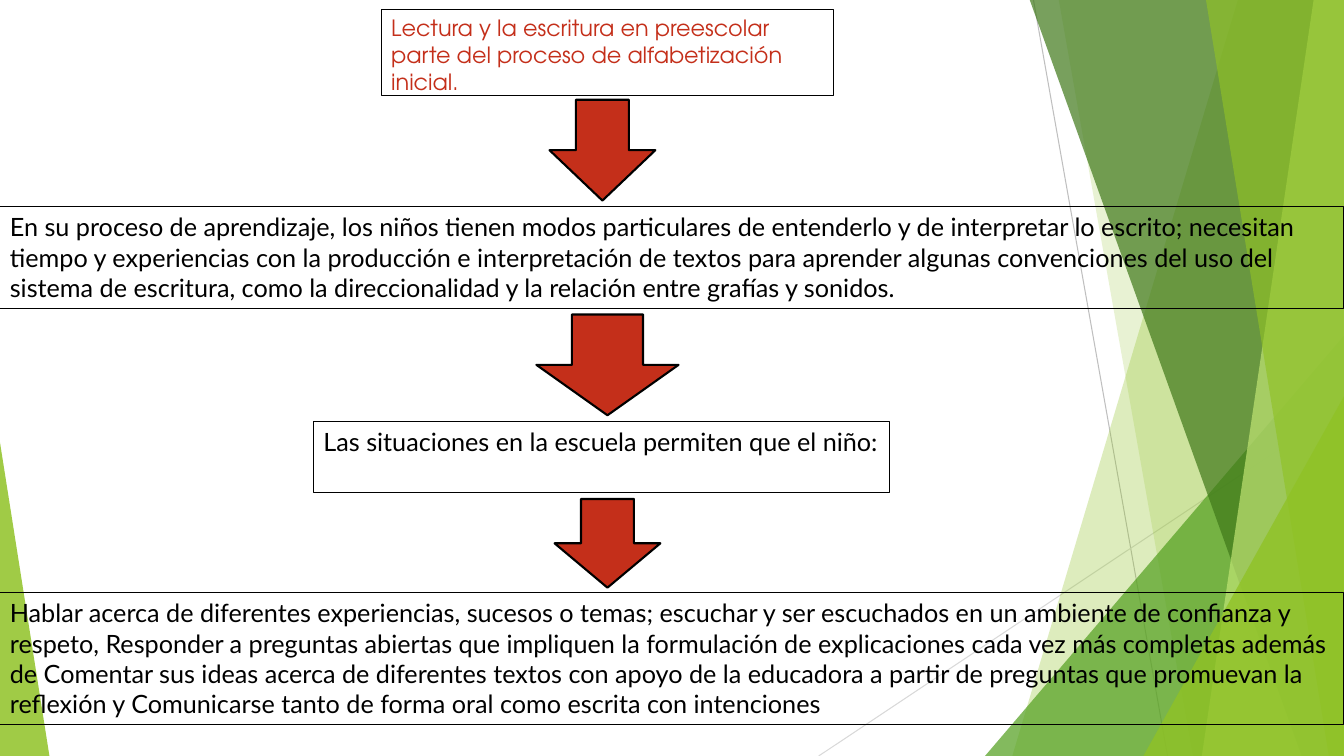
from typing import NamedTuple

from lxml import etree
from pptx import Presentation
from pptx import util as u
from pptx.dml.color import RGBColor
from pptx.enum import shapes, text
from pptx.oxml.ns import qn


class Ray(NamedTuple):
    start: tuple[float, float]
    end: tuple[float, float]
    color: str


class Band(NamedTuple):
    points: list[tuple[float, float]]
    color: str
    opacity: int


class Triangle(NamedTuple):
    box: tuple[float, float, float, float]
    apex: float
    color: str
    opacity: int


class Step(NamedTuple):
    box: tuple[float, float, float, float]
    words: str


RIGHT, TOP, BOTTOM = 13.33, -0.01, 7.5
RED, BLACK = "C42F1A", "000000"


def edge_band(top: float, bottom: float, color: str, opacity: int) -> Band:
    return Band([(top, TOP), (RIGHT, TOP), (RIGHT, BOTTOM), (bottom, BOTTOM)], color, opacity)


RAYS = [
    Ray((10.25, 0), (11.58, BOTTOM), "BFBFBF"),
    Ray((RIGHT, 4.03), (8.12, BOTTOM), "D9D9D9"),
]
FACETS = [
    edge_band(12.28, 10.04, "90C226", 30),
    edge_band(10.5, 11.83, "90C226", 20),
    Triangle((9.77, 3.33, 3.56, 4.17), 1, "54A021", 72),
    edge_band(10.21, 12.91, "3F7819", 70),
    edge_band(13.03, 11.92, "C0E474", 70),
    edge_band(11.96, 13.18, "90C226", 65),
    Triangle((11.34, 3.93, 1.99, 3.57), 1, "90C226", 80),
    Triangle((0, 4.39, 0.49, 3.11), 0, "90C226", 85),
]
TITLE = Step(
    (3.78, 0.09, 4.49, 0.86),
    "Lectura y la escritura en preescolar parte del proceso de alfabetización inicial.",
)
STEPS = [
    Step(
        (0, 2.05, RIGHT, 1.01),
        "En su proceso de aprendizaje, los niños tienen modos particulares de entenderlo "
        "y de interpretar lo escrito; necesitan tiempo y experiencias con la producción e "
        "interpretación de textos para aprender algunas convenciones del uso del sistema de "
        "escritura, como la direccionalidad y la relación entre grafías y sonidos.",
    ),
    Step((3.11, 4.18, 5.71, 0.71), "Las situaciones en la escuela permiten que el niño:"),
    Step(
        (0, 5.88, RIGHT, 1.31),
        "Hablar acerca de diferentes experiencias, sucesos o temas; escuchar y ser escuchados "
        "en un ambiente de confianza y respeto, Responder a preguntas abiertas que impliquen "
        "la formulación de explicaciones cada vez más completas además de Comentar sus ideas "
        "acerca de diferentes textos con apoyo de la educadora a partir de preguntas que "
        "promuevan la reflexión y Comunicarse tanto de forma oral como escrita con intenciones",
    ),
]
ARROWS = [(5.45, 0.99, 1.05, 1), (5.32, 3.12, 1.41, 1), (5.5, 4.95, 1.05, 0.88)]


def rgb(color: str) -> RGBColor:
    return RGBColor.from_string(color)


def outline(sp, color: str, width: float) -> None:
    sp.line.color.rgb = rgb(color)
    sp.line.width = u.Pt(width)


def paint(sp, color: str, opacity: int = 100) -> None:
    sp.shadow.inherit = False
    sp.fill.solid()
    sp.fill.fore_color.rgb = rgb(color)
    if opacity < 100:
        srgb = sp.fill._xPr.find(qn("a:solidFill")).find(qn("a:srgbClr"))
        etree.SubElement(srgb, qn("a:alpha")).set("val", str(opacity * 1000))


def draw_ray(slide, ray: Ray) -> None:
    ends = [u.Inches(v) for v in (*ray.start, *ray.end)]
    line = slide.shapes.add_connector(shapes.MSO_CONNECTOR.STRAIGHT, *ends)
    outline(line, ray.color, 0.75)
    etree.SubElement(line._element.spPr, qn("a:effectLst"))


def draw_facet(slide, facet: Band | Triangle) -> None:
    if isinstance(facet, Triangle):
        box = [u.Inches(v) for v in facet.box]
        sp = slide.shapes.add_shape(shapes.MSO_SHAPE.ISOSCELES_TRIANGLE, *box)
        sp.adjustments[0] = facet.apex
    else:
        points = [(u.Inches(x), u.Inches(y)) for x, y in facet.points]
        builder = slide.shapes.build_freeform(*points[0])
        builder.add_line_segments(points[1:], close=True)
        sp = builder.convert_to_shape()
    paint(sp, facet.color, facet.opacity)
    sp.line.fill.background()


def draw_arrow(slide, box: tuple[float, float, float, float]) -> None:
    sp = slide.shapes.add_shape(shapes.MSO_SHAPE.DOWN_ARROW, *[u.Inches(v) for v in box])
    paint(sp, RED)
    outline(sp, BLACK, 1.5)


def fill_step(sp, step: Step, size: float, font: str, color: str) -> None:
    sp.left, sp.top, sp.width, sp.height = [u.Inches(v) for v in step.box]
    outline(sp, BLACK, 0.75)
    tf = sp.text_frame
    tf.word_wrap = True
    tf.auto_size = text.MSO_AUTO_SIZE.NONE
    tf.vertical_anchor = text.MSO_ANCHOR.TOP
    p = tf.paragraphs[0]
    p.alignment = text.PP_ALIGN.LEFT
    r = p.add_run()
    r.text = step.words
    r.font.size = u.Pt(size)
    r.font.name = font
    r.font.color.rgb = rgb(color)


def main() -> None:
    prs = Presentation()
    prs.slide_width, prs.slide_height = u.Inches(RIGHT), u.Inches(BOTTOM)
    slide = prs.slides.add_slide(prs.slide_layouts.get_by_name("Title Only"))
    for ray in RAYS:
        draw_ray(slide, ray)
    for facet in FACETS:
        draw_facet(slide, facet)
    title = slide.shapes.title
    slide.shapes._spTree.append(title._element)
    fill_step(title, TITLE, 16, "TeX Gyre Adventor", RED)
    for arrow, step in zip(ARROWS, STEPS):
        draw_arrow(slide, arrow)
        box = slide.shapes.add_textbox(*[u.Inches(v) for v in step.box])
        fill_step(box, step, 18, "Lato", BLACK)
    prs.save("out.pptx")


if __name__ == "__main__":
    main()
